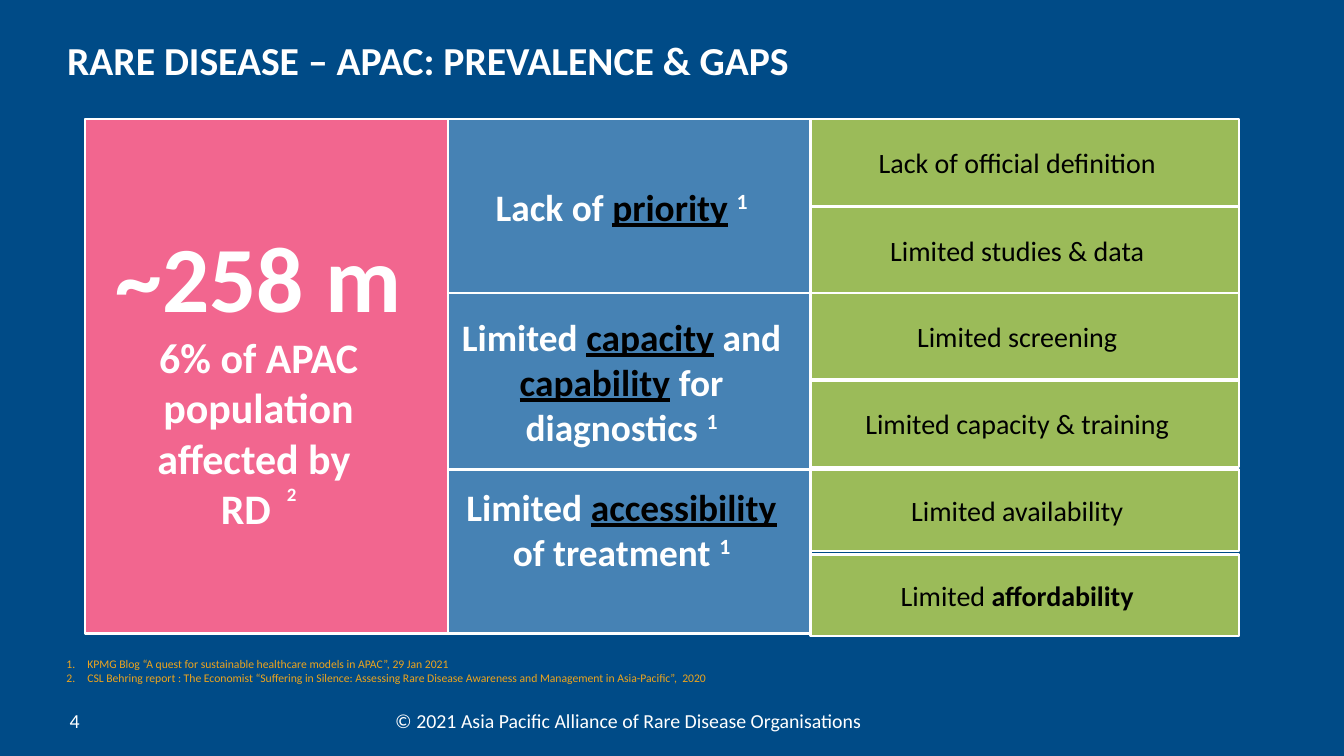
from pptx import Presentation
from pptx import util as u
from pptx.dml.color import RGBColor
from pptx.enum import shapes, text
from pptx.oxml import parse_xml
from pptx.oxml.ns import nsdecls

NAVY = RGBColor(0x00, 0x4B, 0x87)
PINK = RGBColor(0xF2, 0x66, 0x8F)
BLUE = RGBColor(0x46, 0x82, 0xB4)
GREEN = RGBColor(0x9B, 0xBB, 0x59)
GOLD = RGBColor(0xEE, 0xA4, 0x1C)
WHITE = RGBColor(0xFF, 0xFF, 0xFF)
BLACK = RGBColor(0x00, 0x00, 0x00)

LEFT, TOP, WIDE, LAST, TALL = 1.01, 1.42, 4.32, 5.1, 6.12
PAD = (0.14, 0.07, 0.14, 0.07)
GAPS = [
    (1.42, 2.07, 1.04, 1.03, "Lack of _priority_ ",
     ["Lack of official definition", "Limited studies & data"]),
    (3.49, 2.1, 1.04, 1.03, "Limited _capacity_ and _capability_ for diagnostics ",
     ["Limited screening", "Limited capacity & training"]),
    (5.59, 1.95, 1.01, 0.97, "Limited _accessibility_ of treatment ",
     ["Limited availability", "Limited _affordability_"]),
]
NOTES = [
    "KPMG Blog “A quest for sustainable healthcare models in APAC”, 29 Jan 2021",
    "CSL Behring report : The Economist “Suffering in Silence: Assessing Rare Disease "
    "Awareness and Management in Asia-Pacific”,  2020",
]


def write(par, words, size=24, color=WHITE, bold=False, under=False, lift=0):
    run = par.add_run()
    run.text = words
    font = run.font
    font.name, font.size, font.bold = "Calibri", u.Pt(size), bold
    font.color.rgb = color
    if under:
        font.underline = True
    if lift:
        run._r.get_or_add_rPr().set("baseline", str(lift * 1000))


class Deck:
    """Hold the look and the current slide, on a grid of 16 columns by 9 rows."""

    def __init__(self):
        self.show = Presentation()
        self.show.slide_width, self.show.slide_height = u.Inches(16), u.Inches(9)
        self.col = self.show.slide_width / 16
        self.row = self.show.slide_height / 9
        self.slide = self.show.slides.add_slide(self.show.slide_layouts[1])
        fill = self.slide.background.fill
        fill.solid()
        fill.fore_color.rgb = NAVY

    def span(self, x, y, w, h):
        return int(x * self.col), int(y * self.row), int(w * self.col), int(h * self.row)

    def place(self, shape, *area):
        shape.left, shape.top, shape.width, shape.height = self.span(*area)

    def frame(self, shape, pad, anchor=text.MSO_ANCHOR.MIDDLE):
        body = shape.text_frame
        body.word_wrap, body.vertical_anchor = True, anchor
        body.auto_size = text.MSO_AUTO_SIZE.NONE
        (body.margin_left, body.margin_top,
         body.margin_right, body.margin_bottom) = map(u.Inches, pad)
        return body

    def title(self, words, *area):
        shape = self.slide.shapes.title
        self.place(shape, *area)
        par = self.frame(shape, PAD, text.MSO_ANCHOR.TOP).paragraphs[0]
        par.alignment = text.PP_ALIGN.LEFT
        write(par, words, size=34, bold=True)

    def notes(self, lines, *area):
        shape = self.slide.placeholders[1]
        self.place(shape, *area)
        body = self.frame(shape, (0.1, 0.05, 0.1, 0.05), text.MSO_ANCHOR.TOP)
        for i, line in enumerate(lines):
            par = body.add_paragraph() if i else body.paragraphs[0]
            par.space_before = u.Pt(0)
            props = par._p.get_or_add_pPr()
            props.set("marL", str(u.Inches(0.25)))
            props.set("indent", str(-u.Inches(0.25)))
            props.append(parse_xml(f'<a:buFont {nsdecls("a")} typeface="+mj-lt"/>'))
            props.append(parse_xml(f'<a:buAutoNum {nsdecls("a")} type="arabicPeriod"/>'))
            write(par, line, size=10, color=GOLD)

    def label(self, words, *area, align=text.PP_ALIGN.LEFT):
        shape = self.slide.shapes.add_textbox(*self.span(*area))
        par = self.frame(shape, PAD).paragraphs[0]
        par.alignment = align
        write(par, words, size=17)

    def box(self, color, *area, foot=0.05, count=1):
        shape = self.slide.shapes.add_shape(shapes.MSO_SHAPE.RECTANGLE, *self.span(*area))
        shape.shadow.inherit = False
        shape.fill.solid()
        shape.fill.fore_color.rgb = color
        shape.line.color.rgb, shape.line.width = WHITE, u.Pt(2)
        body = self.frame(shape, (0.1, 0.05, 0.28, foot))
        pars = [body.paragraphs[0]] + [body.add_paragraph() for _ in range(count - 1)]
        for par in pars:
            par.alignment = text.PP_ALIGN.CENTER
        return pars

    def cause(self, words, *area, foot):
        par = self.box(BLUE, *area, foot=foot)[0]
        for i, part in enumerate(words.split("_")):
            key = i % 2 == 1
            write(par, part, size=32, color=BLACK if key else WHITE, bold=True, under=key)
        write(par, "1", size=32, bold=True, lift=30)

    def gap(self, words, *area):
        par = self.box(GREEN, *area)[0]
        for i, part in enumerate(filter(None, words.split("_"))):
            write(par, part, color=BLACK, bold=i % 2 == 1)


def main():
    deck = Deck()
    deck.title("RARE DISEASE – APAC: PREVALENCE & GAPS", 0.66, 0.36, 14.67, 0.46)
    deck.notes(NOTES, 0.69, 7.77, 10.25, 0.44)
    deck.label("4", 0.69, 8.34, 0.74, 0.48)
    deck.label("© 2021 Asia Pacific Alliance of Rare Disease Organisations",
               4.02, 8.34, 6.92, 0.48, align=text.PP_ALIGN.CENTER)

    total, share, group = deck.box(PINK, LEFT, TOP, WIDE, TALL, count=3)
    write(total, "~258 m", size=80, bold=True)
    write(share, "6% of APAC population affected by ", size=36, bold=True)
    write(group, "RD ", size=36, bold=True)
    write(group, " ", size=24, bold=True)
    write(group, "2", size=28, bold=True, lift=70)

    for top, tall, step, high, words, items in GAPS:
        foot = 0.59 if top == GAPS[-1][0] else 0.05
        deck.cause(words, LEFT + WIDE, top, WIDE, tall, foot=foot)
        for i, item in enumerate(items):
            deck.gap(item, LEFT + 2 * WIDE, top + i * step, LAST, high)
    deck.show.save("out.pptx")


if __name__ == "__main__":
    main()
